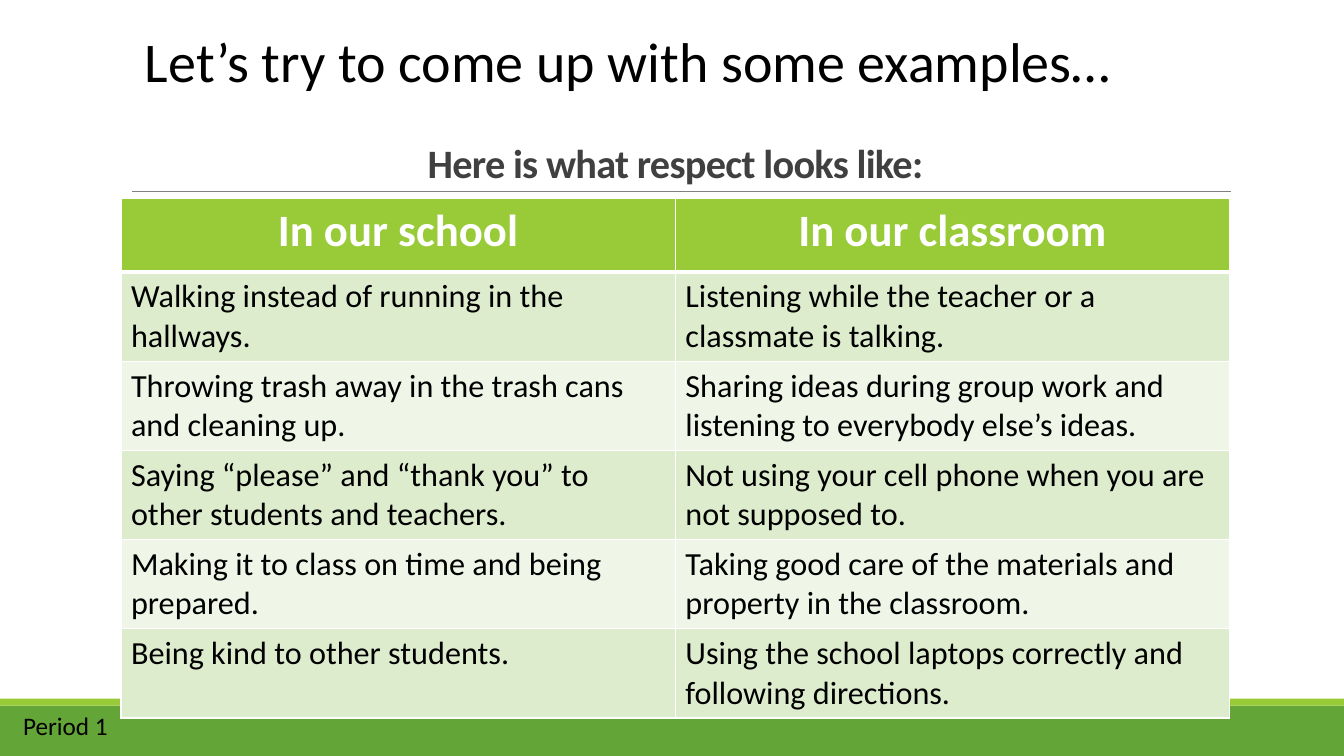
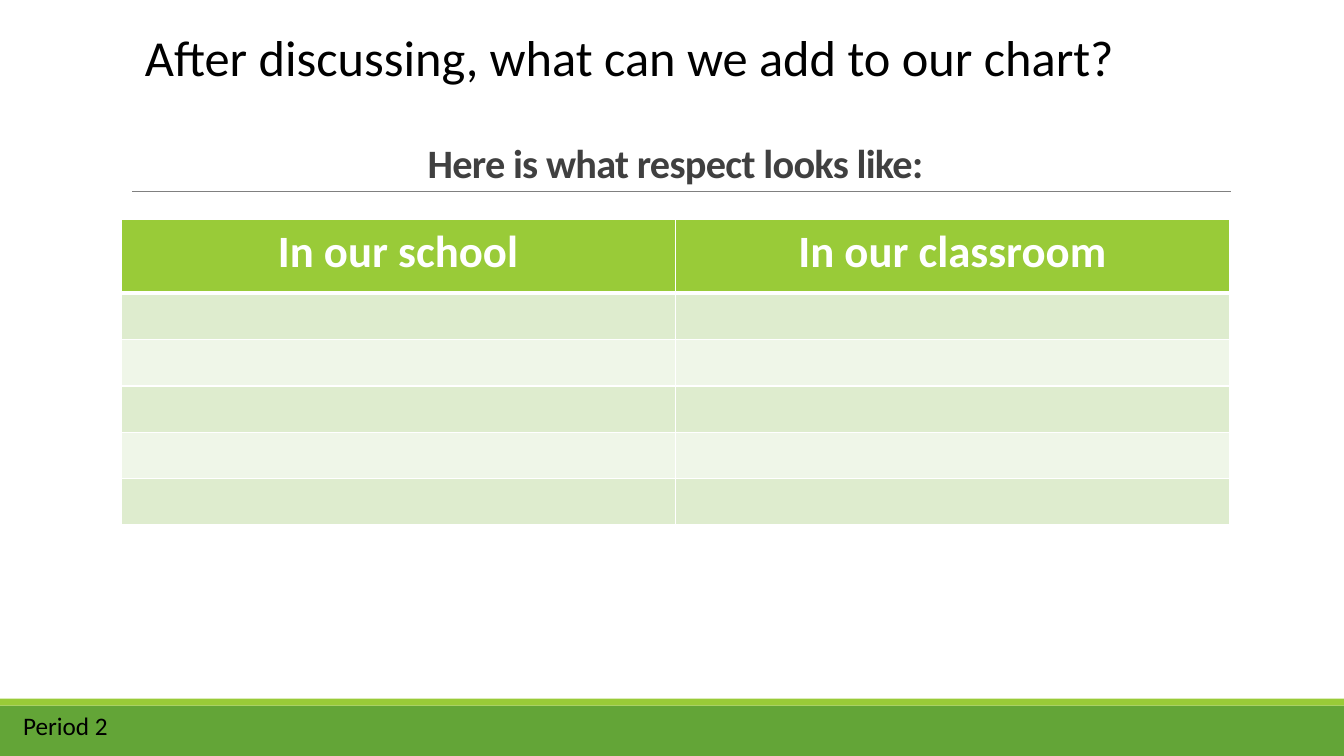
from dataclasses import dataclass

from lxml import etree
from pptx import Presentation
from pptx import util as u
from pptx.dml import color
from pptx.enum import shapes, text
from pptx.oxml import ns

WIDE, HIGH = 13.33, 7.5
FONT = "Calibri"
LIME, GREEN, WHITE, BLACK = "99CB38", "63A537", "FFFFFF", "000000"
GREY, RULE = "404040", "808080"
BANDS = ("DEECCE", "EFF6E8")
LEFT, SPAN, HEAD = 9, 82.5, 9.73
HEADS = ("In our school", "In our classroom")


@dataclass(frozen=True)
class Style:
    size: float
    ink: str = BLACK
    bold: bool = False
    mid: bool = False


@dataclass(frozen=True)
class Page:
    title: str
    size: float
    foot: str
    top: float
    row: float
    rows: tuple[tuple[str, str], ...]


PAGES = (
    Page("Let’s try to come up with some examples…", 40, "Period 1", 26.27, 11.8, (
        ("Walking instead of running in the hallways.",
         "Listening while the teacher or a classmate is talking."),
        ("Throwing trash away in the trash cans and cleaning up.",
         "Sharing ideas during group work and listening to everybody else’s ideas."),
        ("Saying “please” and “thank you” to other students and teachers.",
         "Not using your cell phone when you are not supposed to."),
        ("Making it to class on time and being prepared.",
         "Taking good care of the materials and property in the classroom."),
        ("Being kind to other students.",
         "Using the school laptops correctly and following directions."),
    )),
    Page("After discussing, what can we add to our chart?", 36, "Period 2",
         29.07, 6.13, (("", ""),) * 5),
)


def across(share: float) -> u.Length:
    return u.Inches(WIDE * share / 100)


def down(share: float) -> u.Length:
    return u.Inches(HIGH * share / 100)


def area(x: float, y: float, w: float, h: float) -> tuple:
    return across(x), down(y), across(w), down(h)


def paint(form, tone: str) -> None:
    form.solid()
    form.fore_color.rgb = color.RGBColor.from_string(tone)


def write(frame, words: str, style: Style) -> None:
    frame.text = words
    for para in frame.paragraphs:
        para.alignment = text.PP_ALIGN.CENTER if style.mid else text.PP_ALIGN.LEFT
        for run in para.runs:
            font = run.font
            font.name, font.size, font.bold = FONT, u.Pt(style.size), style.bold
            font.color.rgb = color.RGBColor.from_string(style.ink)


def label(slide, box: tuple, words: str, style: Style):
    frame = slide.shapes.add_textbox(*box).text_frame
    frame.word_wrap = True
    write(frame, words, style)
    return frame


def band(slide, top: float, tall: float, tone: str) -> None:
    bar = slide.shapes.add_shape(shapes.MSO_SHAPE.RECTANGLE, *area(0, top, 100, tall))
    bar.shadow.inherit = False
    paint(bar.fill, tone)
    bar.line.fill.background()


def rule(slide, start: float, end: float, y: float) -> None:
    line = slide.shapes.add_connector(
        shapes.MSO_CONNECTOR.STRAIGHT, across(start), down(y), across(end), down(y))
    line.line.width = u.Pt(0.5)
    paint(line.line.fill, RULE)
    etree.SubElement(line._element.spPr, ns.qn("a:effectLst"))


def edge(cell, above: float, below: float) -> None:
    props = cell._tc.get_or_add_tcPr()
    sides = (("L", 1), ("R", 1), ("T", above), ("B", below))
    for spot, (side, width) in enumerate(sides):
        line = etree.Element(ns.qn(f"a:ln{side}"), w=str(u.Pt(width)))
        fill = etree.SubElement(line, ns.qn("a:solidFill"))
        etree.SubElement(fill, ns.qn("a:srgbClr"), val=WHITE)
        props.insert(spot, line)


def grid(slide, page: Page) -> None:
    lines = (HEADS,) + page.rows
    tall = HEAD + page.row * len(page.rows)
    table = slide.shapes.add_table(
        len(lines), len(HEADS), *area(LEFT, page.top, SPAN, tall)).table
    table.horz_banding = False
    for col in table.columns:
        col.width = across(SPAN / len(HEADS))
    for r, line in enumerate(lines):
        first = r == 0
        table.rows[r].height = down(HEAD if first else page.row)
        style = Style(32, WHITE, True, True) if first else Style(23)
        for c, words in enumerate(line):
            cell = table.cell(r, c)
            paint(cell.fill, LIME if first else BANDS[(r - 1) % 2])
            edge(cell, 3 if r == 1 else 1, 3 if first else 1)
            if words:
                write(cell.text_frame, words, style)


def base(slide) -> None:
    paint(slide.background.fill, WHITE)
    band(slide, 93.33, 6.67, GREEN)
    band(slide, 92.4, 0.93, LIME)
    rule(slide, 9.83, 91.6, 25.33)
    frame = label(slide, area(LEFT, 15.2, SPAN, 10.13),
                  "Here is what respect looks like:", Style(28.8, GREY, True, True))
    frame.vertical_anchor = text.MSO_ANCHOR.BOTTOM
    para = frame.paragraphs[0]
    para.line_spacing = 0.85
    para.runs[0].font._element.set("spc", "-50")


def draw(deck, page: Page) -> None:
    slide = deck.slides.add_slide(deck.slide_layouts[6])
    base(slide)
    grid(slide, page)
    label(slide, area(10.05, 2.8, 81.47, 10.67), page.title, Style(page.size))
    label(slide, area(0.98, 93.33, 16.05, 5.33), page.foot, Style(18))


def main() -> None:
    deck = Presentation()
    deck.slide_width, deck.slide_height = across(100), down(100)
    for page in PAGES:
        draw(deck, page)
    deck.save("out.pptx")


if __name__ == "__main__":
    main()
